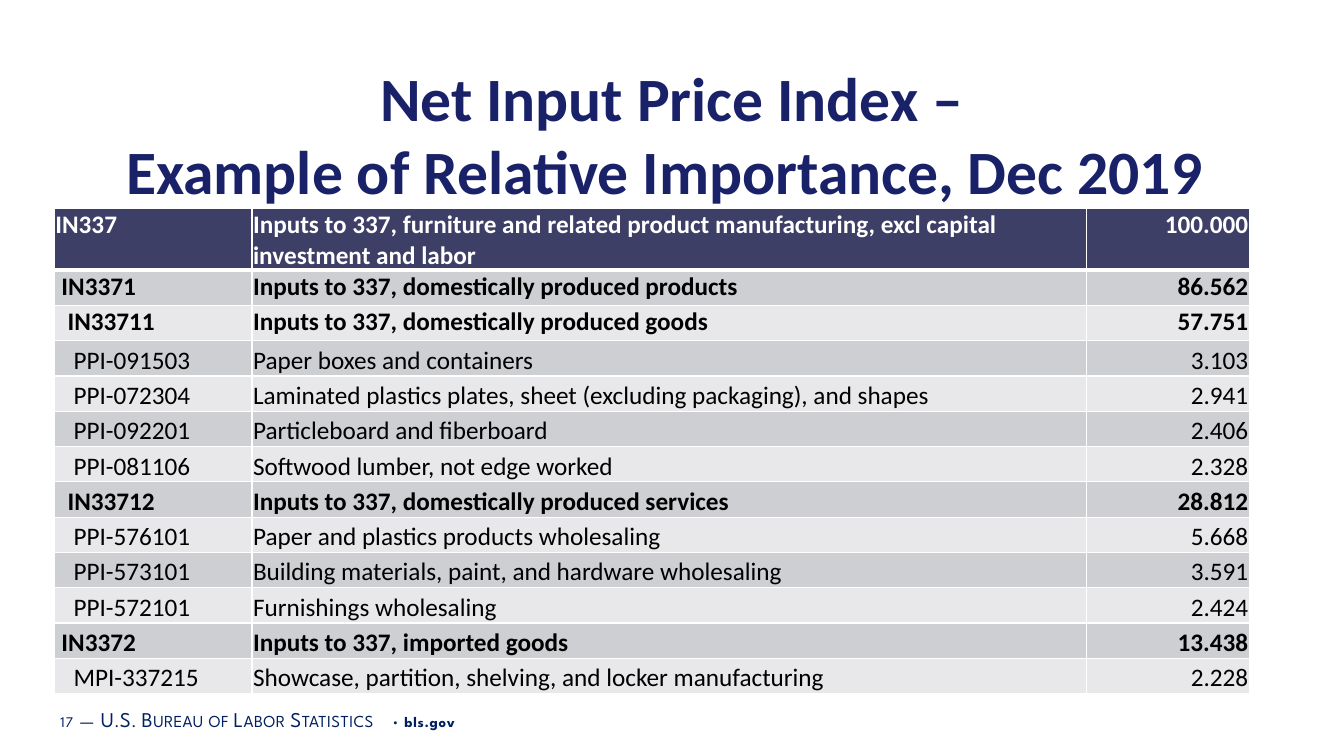
from pptx import Presentation
from pptx.dml.color import RGBColor
from pptx.enum.text import MSO_ANCHOR as Anchor, PP_ALIGN as Align
from pptx.oxml import parse_xml
from pptx.oxml.ns import nsdecls
from pptx.util import Inches, Pt

ROWS = [
    (0, True, "IN337", "Inputs to 337, furniture and related product manufacturing, "
     "excl capital investment and labor", "100.000"),
    (1, True, "IN3371", "Inputs to 337, domestically produced products", "86.562"),
    (2, True, "IN33711", "Inputs to 337, domestically produced goods", "57.751"),
    (3, False, "PPI-091503", "Paper boxes and containers", "3.103"),
    (3, False, "PPI-072304", "Laminated plastics plates, sheet (excluding packaging), "
     "and shapes", "2.941"),
    (3, False, "PPI-092201", "Particleboard and fiberboard", "2.406"),
    (3, False, "PPI-081106", "Softwood lumber, not edge worked", "2.328"),
    (2, True, "IN33712", "Inputs to 337, domestically produced services", "28.812"),
    (3, False, "PPI-576101", "Paper and plastics products wholesaling", "5.668"),
    (3, False, "PPI-573101", "Building materials, paint, and hardware wholesaling", "3.591"),
    (3, False, "PPI-572101", "Furnishings wholesaling", "2.424"),
    (1, True, "IN3372", "Inputs to 337, imported goods", "13.438"),
    (3, False, "MPI-337215", "Showcase, partition, shelving, and locker manufacturing", "2.228"),
]
WIDTHS = [1.96, 8.28, 1.61]
HEAD, BANDS = "3E3F67", ("E8E8EB", "CECFD3")


def paint(target, tone):
    """Give a fill or a font a solid hex colour."""
    if hasattr(target, "solid"):
        target.solid()
        target = target.fore_color
    else:
        target = target.color
    target.rgb = RGBColor.from_string(tone)


def style(run, tone, form):
    """Set a run's colour and its font values."""
    for key, val in form.items():
        setattr(run.font, key, val)
    paint(run.font, tone)


def frame(slide, box, form):
    """Add a wrapped text box and return its text frame."""
    text = slide.shapes.add_textbox(*map(Inches, box)).text_frame
    for key, val in form.items():
        setattr(text, key, val)
    return text


def title(slide, box):
    """Place the two-line centred title."""
    para = frame(slide, box, {"word_wrap": True, "margin_top": Inches(0.09)}).paragraphs[0]
    para.alignment = Align.CENTER
    para.text = "Net Input Price Index –\vExample of Relative Importance, Dec 2019 "
    for run in para.runs:
        style(run, "192168", {"name": "Calibri", "size": Pt(44), "bold": True})


def edge(cell, low):
    """Draw white borders on a cell, with the bottom one of the given width."""
    props = cell._tc.get_or_add_tcPr()
    for pos, (side, wide) in enumerate(zip("LRTB", (1, 1, 1, low))):
        props.insert(pos, parse_xml(
            f'<a:ln{side} {nsdecls("a")} w="{Pt(wide)}"><a:solidFill>'
            f'<a:srgbClr val="FFFFFF"/></a:solidFill></a:ln{side}>'))


def grid(slide, box):
    """Place the table of weights, indented by level."""
    table = slide.shapes.add_table(len(ROWS), len(WIDTHS), *map(Inches, box)).table
    for col, wide in zip(table.columns, WIDTHS):
        col.width = Inches(wide)
    for i, (level, bold, *texts) in enumerate(ROWS):
        table.rows[i].height = Inches(0.35 if i else 0.52)
        for j, text in enumerate(texts):
            cell = table.cell(i, j)
            form = {
                "margin_left": Inches(0.01 + (0 if j else 0.06 * level)),
                "margin_right": Inches(0.01),
                "margin_top": Inches(0.01),
                "margin_bottom": 0,
                "vertical_anchor": Anchor.TOP if i < 3 else Anchor.BOTTOM,
            }
            for key, val in form.items():
                setattr(cell, key, val)
            paint(cell.fill, BANDS[i % 2] if i else HEAD)
            edge(cell, 1 if i else 3)
            para = cell.text_frame.paragraphs[0]
            para.alignment = Align.RIGHT if j == 2 else Align.LEFT
            run = para.add_run()
            run.text = text
            style(run, "000000" if i else "FFFFFF",
                  {"name": "Calibri", "size": Pt(18), "bold": bold})


def footer(slide, box):
    """Place the page number, agency and site line."""
    side, edge_y = Inches(0.07), Inches(0.04)
    para = frame(slide, box, {
        "word_wrap": True, "vertical_anchor": Anchor.MIDDLE, "margin_left": side,
        "margin_right": side, "margin_top": edge_y, "margin_bottom": edge_y,
    }).paragraphs[0]
    parts = [("17", 10.5, 50, False), (" ", 16, 50, False), ("—", 15, 30, False),
             (" ", 16, 50, False), ("U.S. Bureau of Labor Statistics", 15, 30, False),
             (" • ", 10.5, 50, False), ("bls.gov", 10.5, 50, True)]
    for text, size, gap, bold in parts:
        run = para.add_run()
        run.text = text
        style(run, "002060", {"name": "League Spartan", "size": Pt(size), "bold": bold})
        props = run._r.get_or_add_rPr()
        props.set("spc", str(gap))
        if size == 15:
            props.set("cap", "small")


def main():
    """Build and save the slide."""
    deck = Presentation()
    deck.slide_width, deck.slide_height = Inches(13.33), Inches(7.5)
    slide = deck.slides.add_slide(deck.slide_layouts[6])
    footer(slide, (0.53, 6.93, 8.47, 0.4))
    title(slide, (0.54, 0.5, 12.25, 0.88))
    grid(slide, (0.54, 2.07, 11.85, 4.79))
    deck.save("out.pptx")


if __name__ == "__main__":
    main()
